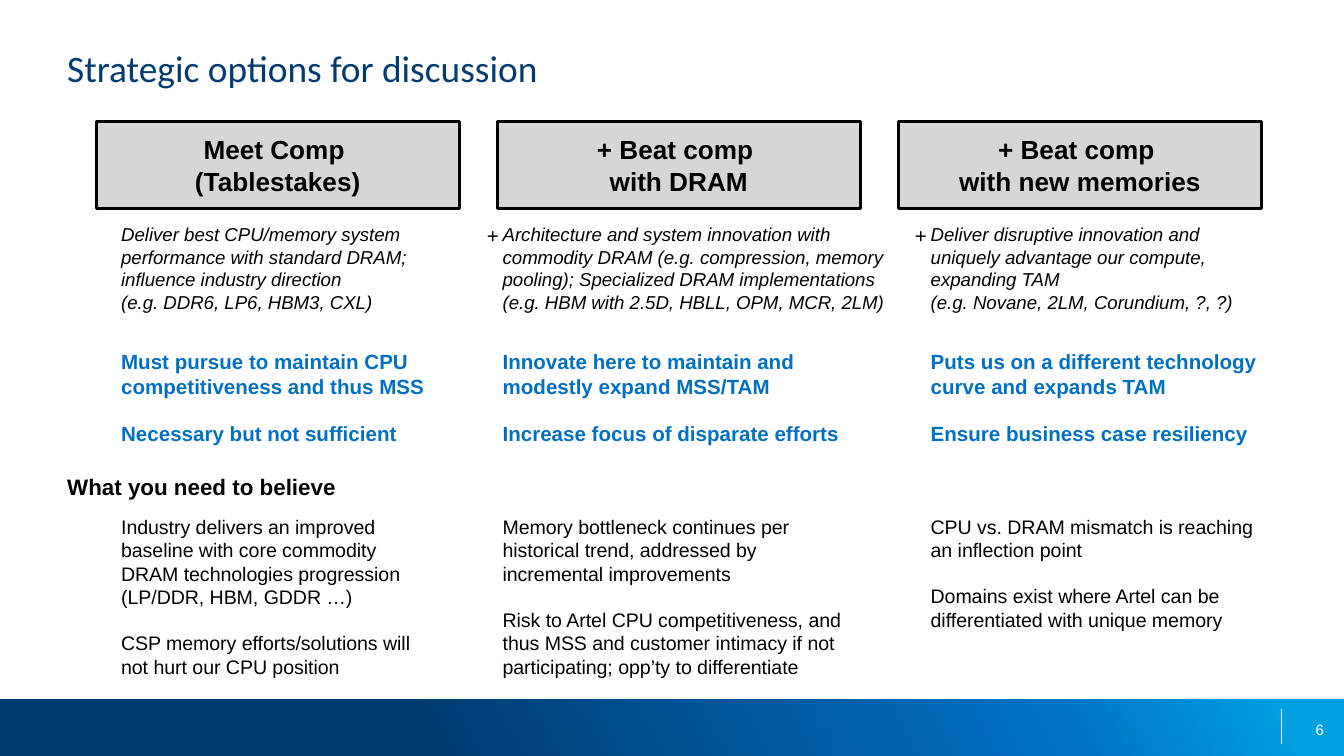
from copy import deepcopy
from dataclasses import dataclass

from lxml.etree import SubElement
from pptx import Presentation
from pptx.dml.color import RGBColor
from pptx.enum.shapes import MSO_CONNECTOR, MSO_SHAPE
from pptx.enum.text import MSO_ANCHOR, PP_ALIGN
from pptx.oxml.ns import qn
from pptx.util import Cm, Pt


@dataclass(frozen=True)
class Theme:
    body_font: str = "Arial"
    title_font: str = "Calibri"
    navy: str = "003C71"
    blue: str = "0071C5"
    sky: str = "009FDF"
    accent: str = "0070C0"
    grey: str = "D6D6D6"
    black: str = "000000"
    white: str = "FFFFFF"
    title_size: float = 20
    header_size: float = 14
    heading_size: float = 12
    accent_size: float = 11
    belief_size: float = 10.5
    summary_size: float = 10
    number_size: float = 8


@dataclass(frozen=True)
class Box:
    """A region in centimetres."""
    left: float
    top: float
    width: float
    height: float

    def inner(self, left, top, width, height):
        return Box(self.left + left, self.top + top, width, height)

    def lengths(self):
        return [Cm(value) for value in (self.left, self.top, self.width, self.height)]


@dataclass(frozen=True)
class Option:
    header: str
    summary: str
    positions: list
    beliefs: list
    text_offset: float
    widths: tuple  # summary, positions, beliefs
    beliefs_height: float = 3.12
    plus: bool = True


THEME = Theme()
HEADER_WIDTH, HEADER_HEIGHT, COLUMN_PITCH = 6.86, 1.66, 7.58
SUMMARY_INDENT, SUMMARY_INSETS = 0.48, (0.25, 0.13)

OPTIONS = [
    Option(
        "Meet Comp \n(Tablestakes)",
        "Deliver best CPU/memory system performance with standard DRAM; "
        "influence industry direction\n(e.g. DDR6, LP6, HBM3, CXL)",
        ["Must pursue to maintain CPU competitiveness and thus MSS",
         "Necessary but not sufficient"],
        ["Industry delivers an improved baseline with core commodity DRAM "
         "technologies progression (LP/DDR, HBM, GDDR …)",
         "CSP memory efforts/solutions will not hurt our CPU position"],
        0.47, (7.52, 6.63, 5.97), plus=False),
    Option(
        "+ Beat comp \nwith DRAM",
        "Architecture and system innovation with commodity DRAM (e.g. compression, "
        "memory pooling); Specialized DRAM implementations "
        "(e.g. HBM with 2.5D, HBLL, OPM, MCR, 2LM)",
        ["Innovate here to maintain and modestly expand MSS/TAM",
         "Increase focus of disparate efforts"],
        ["Memory bottleneck continues per historical trend, addressed by "
         "incremental improvements",
         "Risk to Artel CPU competitiveness, and thus MSS and customer intimacy "
         "if not participating; opp’ty to differentiate"],
        0.1, (8.48, 6.83, 6.45)),
    Option(
        "+ Beat comp \nwith new memories",
        "Deliver disruptive innovation and uniquely advantage our compute, "
        "expanding TAM\n(e.g. Novane, 2LM, Corundium, ?, ?)",
        ["Puts us on a different technology curve and expands TAM",
         "Ensure business case resiliency"],
        ["CPU vs. DRAM mismatch is reaching an inflection point",
         "Domains exist where Artel can be differentiated with unique memory"],
        0.61, (7.09, 6.3, 6.17), beliefs_height=2.24),
]


def color(value):
    return RGBColor.from_string(value)


def write_text(shape, paragraphs, *, size, ink=THEME.black, font=THEME.body_font,
               bold=False, italic=False, align=PP_ALIGN.LEFT, anchor=MSO_ANCHOR.TOP,
               insets=(0, 0), indent=0, gap=0):
    """Fill a shape with paragraphs; a newline inside one is a line break."""
    frame = shape.text_frame
    frame.word_wrap = True
    frame.vertical_anchor = anchor
    frame.margin_left = frame.margin_right = Cm(insets[0])
    frame.margin_top = frame.margin_bottom = Cm(insets[1])
    for index, text in enumerate(paragraphs):
        para = frame.add_paragraph() if index else frame.paragraphs[0]
        para.alignment = align
        if indent:
            para._p.get_or_add_pPr().set("marL", str(Cm(indent)))
        if index and gap:
            para.space_before = Pt(gap)
        for number, line in enumerate(text.split("\n")):
            if number:
                para.add_line_break()
            span = para.add_run()
            span.text = line
            span.font.name, span.font.size = font, Pt(size)
            span.font.bold, span.font.italic = bold, italic
            span.font.color.rgb = color(ink)


def add_text(page, box, *paragraphs, **text_format):
    write_text(page.shapes.add_textbox(*box.lengths()), paragraphs, **text_format)


def add_rectangle(page, box):
    shape = page.shapes.add_shape(MSO_SHAPE.RECTANGLE, *box.lengths())
    shape.shadow.inherit = False
    return shape


def add_footer(page, box, number):
    # Gradient band with three stops
    band = add_rectangle(page, box)
    band.line.fill.background()
    band.fill.gradient()
    band.fill.gradient_angle = 29
    stop_list = band._element.spPr.find(qn("a:gradFill")).find(qn("a:gsLst"))
    stop_list.append(deepcopy(stop_list[0]))
    stops = ((0.32, THEME.navy), (0.78, THEME.blue), (0.95, THEME.sky))
    for stop, (position, shade) in zip(band.fill.gradient_stops, stops):
        stop.position = position
        stop.color.rgb = color(shade)

    # Divider and page number
    x, y = box.left + 24.22, box.top + 0.19
    divider = page.shapes.add_connector(
        MSO_CONNECTOR.STRAIGHT, Cm(x), Cm(y), Cm(x), Cm(y + 0.66))
    divider.line.color.rgb = color(THEME.white)
    divider.line.width = Pt(0.75)
    SubElement(divider._element.spPr, qn("a:effectLst"))
    add_text(page, box.inner(19.1, 0.19, 5.92, 0.76), number, size=THEME.number_size,
             ink=THEME.white, align=PP_ALIGN.RIGHT, anchor=MSO_ANCHOR.MIDDLE)


def add_option(page, box, option):
    summary_width, positions_width, beliefs_width = option.widths
    text_left = option.text_offset

    # Header
    header = add_rectangle(page, box.inner(0, 0, box.width, HEADER_HEIGHT))
    header.fill.solid()
    header.fill.fore_color.rgb = color(THEME.grey)
    header.line.color.rgb = color(THEME.black)
    header.line.width = Pt(1.5)
    write_text(header, [option.header], size=THEME.header_size, bold=True,
               align=PP_ALIGN.CENTER, anchor=MSO_ANCHOR.MIDDLE, insets=(0, 0.13))

    # Summary, with its plus sign
    summary_left = text_left - SUMMARY_INDENT - SUMMARY_INSETS[0]
    add_text(page, box.inner(summary_left, 1.8, summary_width, 1.96), option.summary,
             size=THEME.summary_size, italic=True, insets=SUMMARY_INSETS,
             indent=SUMMARY_INDENT)
    if option.plus:
        add_text(page, box.inner(text_left - 0.3, 1.93, 0.66, 0.48), "+",
                 size=THEME.accent_size)

    # Positions and beliefs
    add_text(page, box.inner(text_left, 4.31, positions_width, 1.83), *option.positions,
             size=THEME.accent_size, ink=THEME.accent, bold=True, gap=12)
    add_text(page, box.inner(text_left, 7.44, beliefs_width, option.beliefs_height),
             *option.beliefs, size=THEME.belief_size, gap=12)


def add_options_page(page, box):
    add_footer(page, box.inner(0, 13.22, box.width, 1.07), "6")
    add_text(page, box.inner(1.27, 0.86, 22.86, 2.41), "Strategic options for discussion",
             size=THEME.title_size, font=THEME.title_font, ink=THEME.navy)
    for index, option in enumerate(OPTIONS):
        column = box.inner(1.82 + index * COLUMN_PITCH, 2.29, HEADER_WIDTH, 10.56)
        add_option(page, column, option)
    add_text(page, box.inner(1.27, 8.94, 6.05, 0.51), "What you need to believe",
             size=THEME.heading_size, bold=True)


def main():
    deck = Presentation()
    slide_box = Box(0, 0, 25.4, 14.29)
    deck.slide_width, deck.slide_height = slide_box.lengths()[2:]
    page = deck.slides.add_slide(deck.slide_layouts[6])
    add_options_page(page, slide_box)
    deck.save("out.pptx")


if __name__ == "__main__":
    main()
